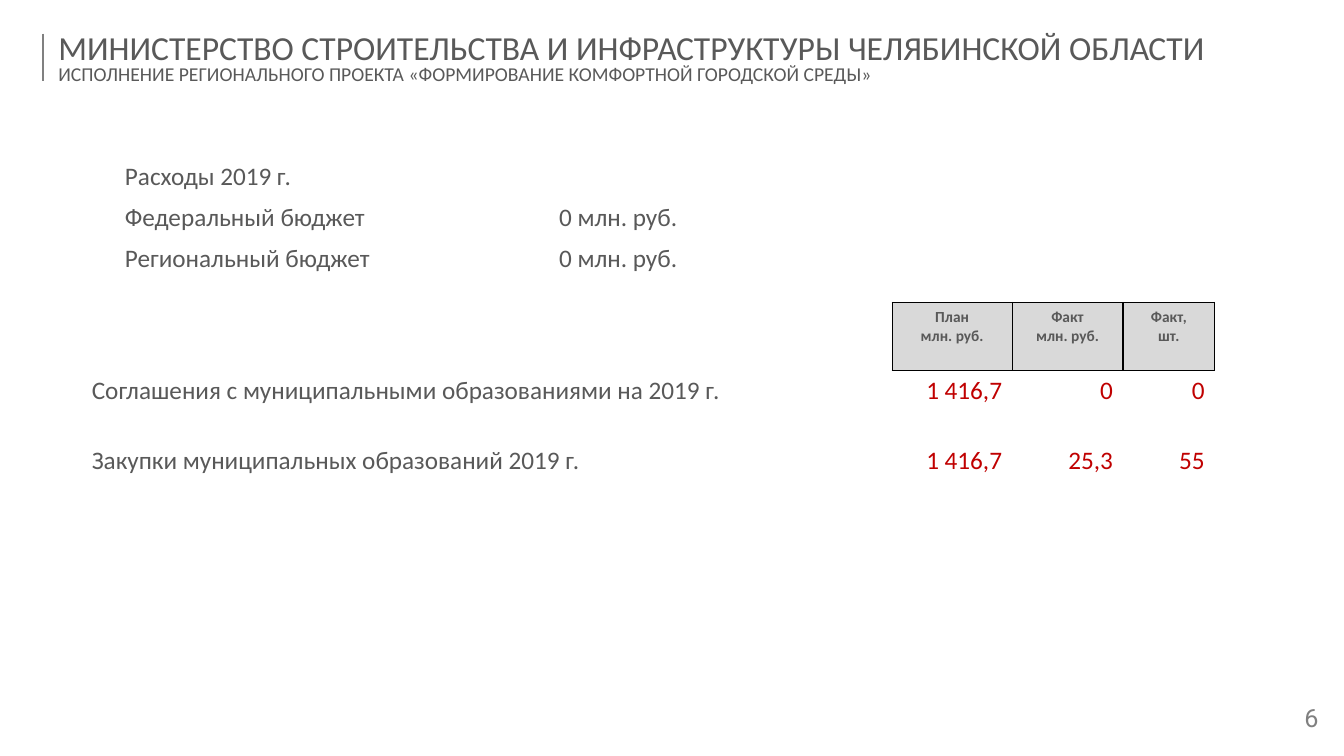
from dataclasses import dataclass

from lxml import etree
from pptx import Presentation
from pptx.dml.color import RGBColor
from pptx.enum.shapes import MSO_CONNECTOR
from pptx.enum.text import MSO_ANCHOR, PP_ALIGN as ALIGN
from pptx.oxml import parse_xml
from pptx.oxml.ns import nsdecls, qn
from pptx.util import Pt


@dataclass(frozen=True)
class Theme:
    text: str = "595959"
    accent: str = "C00000"
    muted: str = "808080"
    header: str = "D9D9D9"
    border: str = "000000"
    font: str = "Calibri"
    number_font: str = "Roboto"
    title: int = 24
    body: int = 18
    subtitle: int = 14
    small: int = 11


THEME = Theme()
NO_GRID_STYLE = "{2D5ABB26-0587-4C30-8999-92F81FD0307C}"

BUDGET = [
    [],
    ["", "Расходы 2019 г."],
    ["", "Федеральный бюджет", "0 млн. руб."],
    ["", "Региональный бюджет", "0 млн. руб."],
]
EXECUTION = [
    ["", "", "План\nмлн. руб.", "Факт\nмлн. руб.", "Факт,\nшт."],
    ["", "Соглашения с муниципальными образованиями на 2019 г.", "1 416,7", "0", "0"],
    ["", "Закупки муниципальных образований 2019 г.", "1 416,7", "25,3", "55"],
]


def write(p, text, size=THEME.body, color=THEME.text, font=THEME.font,
          bold=False, align=ALIGN.LEFT, spacing=None):
    p.alignment = align
    if spacing:
        p.line_spacing = spacing
    r = p.add_run()
    r.text = text
    r.font.size = Pt(size)
    r.font.name = font
    r.font.bold = bold
    r.font.color.rgb = RGBColor.from_string(color)


def add_text_box(s, left, top, width, height):
    tf = s.shapes.add_textbox(Pt(left), Pt(top), Pt(width), Pt(height)).text_frame
    tf.word_wrap = True
    tf.vertical_anchor = MSO_ANCHOR.MIDDLE
    return tf


def add_rule(s, x, top, bottom):
    line = s.shapes.add_connector(MSO_CONNECTOR.STRAIGHT, Pt(x), Pt(top), Pt(x), Pt(bottom))
    line.line.color.rgb = RGBColor.from_string(THEME.muted)
    line.line.width = Pt(1.5)
    etree.SubElement(line._element.spPr, qn("a:effectLst"))


def add_plain_table(s, left, top, widths, heights):
    """Add a table with no fills, grid or banding."""
    frame = s.shapes.add_table(len(heights), len(widths), Pt(left), Pt(top),
                               Pt(sum(widths)), Pt(sum(heights)))
    table = frame.table
    table.first_row = table.horz_banding = False
    table._tbl.tblPr.find(qn("a:tableStyleId")).text = NO_GRID_STYLE
    for column, width in zip(table.columns, widths):
        column.width = Pt(width)
    for row, height in zip(table.rows, heights):
        row.height = Pt(height)
    for cell in table.iter_cells():
        cell.fill.background()
    return table


def fill_cell(cell, text, **style):
    tf = cell.text_frame
    for i, line in enumerate(text.split("\n")):
        write(tf.add_paragraph() if i else tf.paragraphs[0], line, **style)


def frame_cell(cell):
    """Shade a header cell and outline all four sides."""
    cell.fill.solid()
    cell.fill.fore_color.rgb = RGBColor.from_string(THEME.header)
    for i, side in enumerate(("lnL", "lnR", "lnT", "lnB")):
        cell._tc.tcPr.insert(i, parse_xml(
            f'<a:{side} {nsdecls("a")} w="{Pt(1)}"><a:solidFill>'
            f'<a:srgbClr val="{THEME.border}"/></a:solidFill></a:{side}>'))


def add_budget(s):
    table = add_plain_table(s, 64.8, 69.1, (16.6, 246.2, 162.7), (42.5, 29.3, 29.3, 29.3))
    for i, row in enumerate(BUDGET):
        for j, text in enumerate(row):
            if text:
                fill_cell(table.cell(i, j), text, align=ALIGN.RIGHT if j == 2 else ALIGN.LEFT)


def add_execution(s):
    table = add_plain_table(s, 34.6, 216, (23.8, 578.9, 85.7, 79.2, 65.5), (48.5, 50.5, 48.5))
    for i, row in enumerate(EXECUTION):
        for j, text in enumerate(row):
            cell = table.cell(i, j)
            if not text:
                continue
            if i == 0:
                frame_cell(cell)
                fill_cell(cell, text, size=THEME.small, bold=True, align=ALIGN.CENTER)
            elif j == 1:
                fill_cell(cell, text)
            else:
                fill_cell(cell, text, color=THEME.accent, align=ALIGN.RIGHT)


def add_title(s):
    tf = add_text_box(s, 34.6, 18.7, 971.3, 48.2)
    write(tf.paragraphs[0], "МИНИСТЕРСТВО СТРОИТЕЛЬСТВА И ИНФРАСТРУКТУРЫ ЧЕЛЯБИНСКОЙ ОБЛАСТИ",
          size=THEME.title, spacing=0.8)
    write(tf.add_paragraph(),
          "ИСПОЛНЕНИЕ РЕГИОНАЛЬНОГО ПРОЕКТА «ФОРМИРОВАНИЕ КОМФОРТНОЙ ГОРОДСКОЙ СРЕДЫ»",
          size=THEME.subtitle, spacing=0.8)


def add_page_number(s, number):
    tf = add_text_box(s, 895, 496.8, 83.5, 36)
    write(tf.paragraphs[0], str(number), color=THEME.muted, font=THEME.number_font,
          align=ALIGN.CENTER, spacing=0.8)


def main():
    prs = Presentation()
    prs.slide_width, prs.slide_height = Pt(960), Pt(540)
    s = prs.slides.add_slide(prs.slide_layouts[6])
    add_rule(s, 31, 24, 57.6)
    add_page_number(s, 6)
    add_execution(s)
    add_title(s)
    add_budget(s)
    prs.save("out.pptx")


if __name__ == "__main__":
    main()
